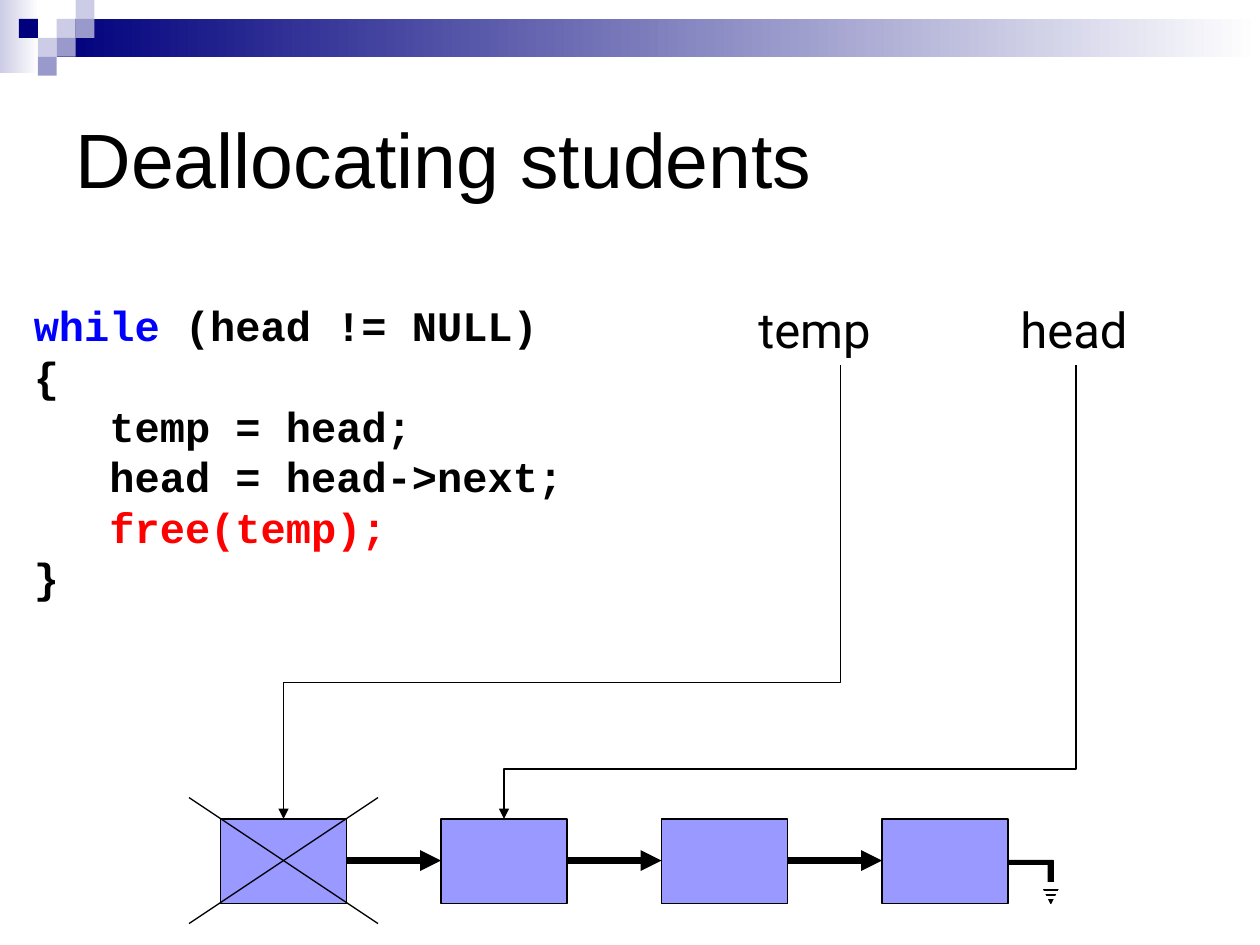
"""Build the slide on freeing a linked list of students."""
from lxml import etree
from pptx import Presentation
from pptx.dml import color
from pptx.enum import shapes, text
from pptx.oxml import ns
from pptx.util import Inches, Pt

BLACK, WHITE, NAVY = "000000", "FFFFFF", "00007D"
PALE, MID, NODE = "CCCCE6", "9999CC", "9999FF"
BLUE, RED = "0000FF", "FF0000"


def rgb(code):
    """Turn a hex string into a colour."""
    return color.RGBColor.from_string(code)


def style(run, size, font, tint, bold=False):
    """Set the font of a run."""
    run.font.size = Pt(size)
    run.font.name = font
    run.font.bold = bold
    run.font.color.rgb = rgb(tint)


def stroke(line, tint, width):
    """Set the colour and width of a line."""
    line.color.rgb = rgb(tint)
    line.width = Pt(width)


def box(slide, x, y, w, h, fill, edge=None):
    """Add a plain rectangle."""
    shape = slide.shapes.add_shape(
        shapes.MSO_SHAPE.RECTANGLE, Inches(x), Inches(y), Inches(w), Inches(h))
    shape.shadow.inherit = False
    shape.fill.solid()
    shape.fill.fore_color.rgb = rgb(fill)
    if edge:
        stroke(shape.line, edge, 0.75)
    else:
        shape.line.fill.background()
    return shape


def fade(slide, x, y, w, h, tint):
    """Add a rectangle that fades to white rightwards."""
    fill = box(slide, x, y, w, h, tint).fill
    fill.gradient()
    fill.gradient_angle = 0
    for stop, code, spot in zip(fill.gradient_stops, (tint, WHITE), (0, 1)):
        stop.color.rgb = rgb(code)
        stop.position = spot


def link(slide, x1, y1, x2, y2, width=0.75, tint=BLACK, arrow=False,
         kind=shapes.MSO_CONNECTOR.STRAIGHT):
    """Add a connector, with an arrowhead at its end if asked."""
    line = slide.shapes.add_connector(
        kind, Inches(x1), Inches(y1), Inches(x2), Inches(y2))
    stroke(line.line, tint, width)
    if arrow:
        tail = etree.SubElement(line.line._get_or_add_ln(), ns.qn("a:tailEnd"))
        tail.set("type", "triangle")
    etree.SubElement(line._element.spPr, ns.qn("a:effectLst"))
    return line


def drop(slide, x1, y1, x2, y2, bend):
    """Add an elbow arrow that runs down, left and down again."""
    mx, my = (x1 + x2) / 2, (y1 + y2) / 2
    w, h = (y2 - y1) / 2, (x1 - x2) / 2
    line = link(slide, mx - w, my - h, mx + w, my + h, arrow=True,
                kind=shapes.MSO_CONNECTOR.ELBOW)
    props = line._element.spPr
    props.find(ns.qn("a:xfrm")).set("rot", "5400000")
    geom = props.find(ns.qn("a:prstGeom"))
    guides = geom.find(ns.qn("a:avLst"))
    if guides is None:
        guides = etree.SubElement(geom, ns.qn("a:avLst"))
    guide = etree.SubElement(guides, ns.qn("a:gd"))
    guide.set("name", "adj1")
    guide.set("fmla", f"val {round(bend * 100000)}")


def write(slide, x, y, w, h, lines, size, font, bold=False):
    """Add a text box from lines of (words, colour) runs."""
    frame = slide.shapes.add_textbox(
        Inches(x), Inches(y), Inches(w), Inches(h)).text_frame
    frame.word_wrap = True
    for i, runs in enumerate(lines):
        para = frame.add_paragraph() if i else frame.paragraphs[0]
        for words, tint in runs:
            run = para.add_run()
            run.text = words
            style(run, size, font, tint, bold)


def head(slide, words):
    """Place and fill the title."""
    title = slide.shapes.title
    title.left, title.top = Inches(0.5), Inches(0.5)
    title.width, title.height = Inches(9), Inches(1.5)
    frame = title.text_frame
    frame.vertical_anchor = text.MSO_ANCHOR.MIDDLE
    para = frame.paragraphs[0]
    para.alignment = text.PP_ALIGN.LEFT
    run = para.add_run()
    run.text = words
    style(run, 44, "Arial", BLACK)


def banner(slide):
    """Draw the fading bar and its small squares."""
    fade(slide, 0, 0, 0.31, 0.58, PALE)
    fade(slide, 0.45, 0.15, 9.55, 0.3, NAVY)
    tiles = [(3, 1, PALE), (4, 0, PALE), (4, 1, MID), (2, 2, PALE),
             (1, 1, NAVY), (3, 2, MID), (2, 3, MID)]
    for col, row, tint in tiles:
        box(slide, col * 0.15, row * 0.15, 0.15, 0.15, tint)


def ground(slide):
    """Draw the ground sign that ends the list."""
    pts = [(8.34, 7.17), (8.26, 7.01), (8.32, 7.01), (8.32, 6.86), (8, 6.86),
           (8, 6.83), (8.36, 6.83), (8.36, 7.01), (8.42, 7.01)]
    spots = [(Inches(x), Inches(y)) for x, y in pts]
    pen = slide.shapes.build_freeform(*spots[0])
    pen.add_line_segments(spots[1:], close=True)
    sign = pen.convert_to_shape()
    sign.shadow.inherit = False
    sign.fill.solid()
    sign.fill.fore_color.rgb = rgb(BLACK)
    stroke(sign.line, BLACK, 0.75)
    for y in (7.01, 7.04, 7.08, 7.12):
        link(slide, 8.17, y, 8.5, y, 1.75, WHITE)


def chain(slide):
    """Draw the nodes, their links and the pointers to them."""
    lefts = [1.75 + 1.75 * i for i in range(4)]
    for x in lefts:
        box(slide, x, 6.5, 1, 0.67, NODE, BLACK)
    for x in lefts[:-1]:
        link(slide, x + 1, 6.83, x + 1.75, 6.83, 4, arrow=True)
    drop(slide, 6.67, 2.9, 2.25, 6.5, 0.7)
    drop(slide, 8.54, 2.9, 4, 6.5, 0.89)
    link(slide, 1.5, 6.33, 3, 7.33)
    link(slide, 1.5, 7.33, 3, 6.33)
    ground(slide)


def main():
    """Build and save the slide."""
    deck = Presentation()
    deck.slide_width, deck.slide_height = Inches(10), Inches(7.5)
    slide = deck.slides.add_slide(deck.slide_layouts[5])
    banner(slide)
    head(slide, "Deallocating students")
    chain(slide)
    write(slide, 8, 2.33, 1.08, 0.57, [[("head", BLACK)]], 28, "Roboto")
    write(slide, 5.92, 2.33, 1.5, 0.57, [[("temp", BLACK)]], 28, "Roboto")
    code = [
        [("while ", BLUE), ("(head != NULL)", BLACK)],
        [("{", BLACK)],
        [("   temp = head;", BLACK)],
        [("   head = head->next;", BLACK)],
        [("   ", BLACK), ("free(temp);", RED)],
        [("}", BLACK)],
    ]
    write(slide, 0.17, 2.33, 5, 2.5, code, 24, "Courier New", True)
    deck.save("out.pptx")


if __name__ == "__main__":
    main()
